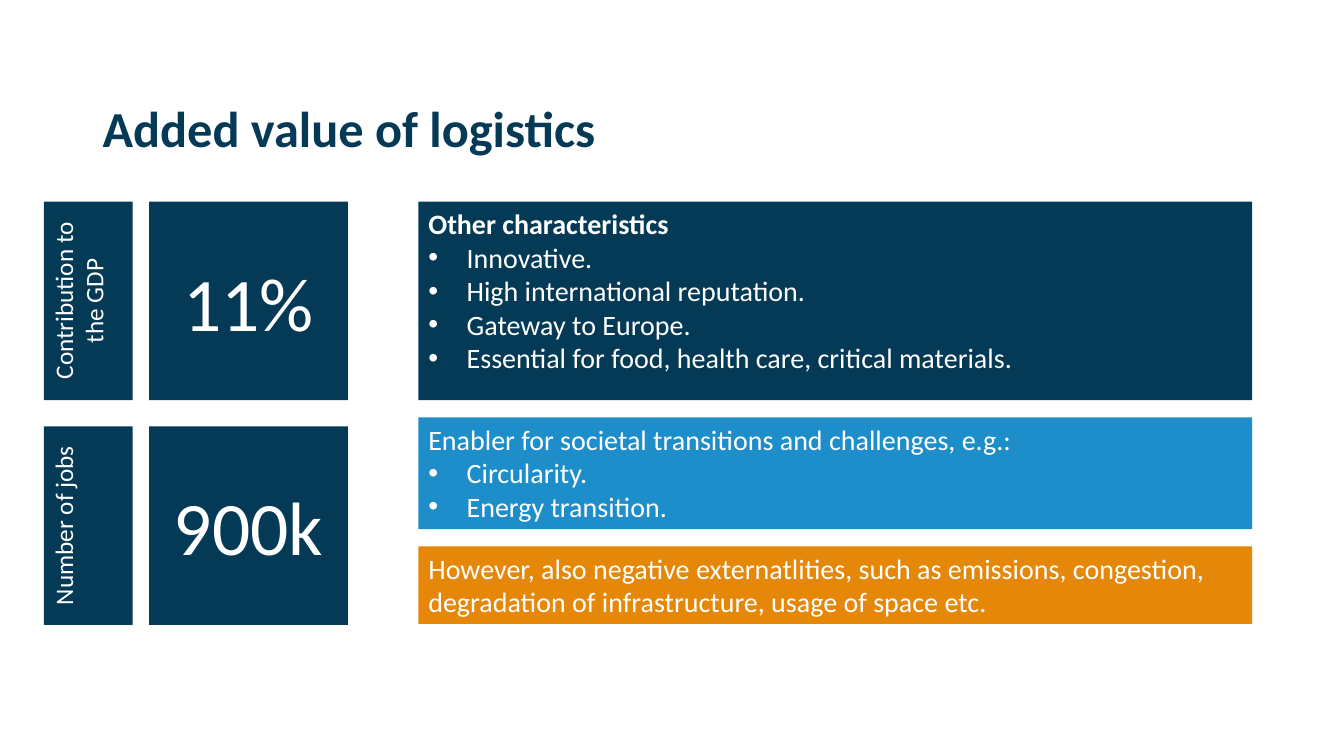
"""Build the slide on the added value of logistics."""
from lxml import etree
from pptx import Presentation
from pptx.dml.color import RGBColor
from pptx.enum.shapes import MSO_SHAPE as Shape
from pptx.enum.text import MSO_ANCHOR as Anchor, MSO_AUTO_SIZE as AutoSize, PP_ALIGN as Align
from pptx.oxml.ns import qn
from pptx.util import Inches, Pt

COLORS = {"navy": "043A56", "blue": "1D8ECA", "orange": "E58709", "white": "FFFFFF"}
BULLET_INDENT = Inches(0.38)
TILE = 1.97
LABEL_HEIGHT = 0.88

deck = Presentation()
deck.slide_width, deck.slide_height = Inches(13.33), Inches(7.5)
page = deck.slides.add_slide(deck.slide_layouts[6])


def write(box, lines, size, color="white", align=Align.LEFT, anchor=Anchor.TOP):
    frame = box.text_frame
    frame.word_wrap = True
    frame.vertical_anchor = anchor
    frame.text = "\n".join(lines)
    for para in frame.paragraphs:
        para.alignment = align
        for span in para.runs:
            span.font.name = "Calibri"
            span.font.size = Pt(size)
            span.font.color.rgb = RGBColor.from_string(COLORS[color])
    return frame


def add_block(left, top, width, height, color):
    box = page.shapes.add_shape(
        Shape.RECTANGLE, Inches(left), Inches(top), Inches(width), Inches(height))
    box.shadow.inherit = False
    box.fill.solid()
    box.fill.fore_color.rgb = RGBColor.from_string(COLORS[color])
    box.line.fill.background()
    return box


title = page.shapes.add_textbox(Inches(0.92), Inches(0.76), Inches(11.5), Inches(1.09))
heading = write(title, ["Added value of logistics"], 36, "navy", anchor=Anchor.MIDDLE).paragraphs[0]
heading.line_spacing = 0.9
heading.runs[0].font.bold = True

figures = [(2, "Contribution to the GDP", "11%"), (4.23, "Number of jobs", "900k")]
for top, caption, value in figures:
    label = add_block(-0.11, top + (TILE - LABEL_HEIGHT) / 2, TILE, LABEL_HEIGHT, "navy")
    label.rotation = 270
    frame = write(label, [caption], 18, align=Align.CENTER)
    frame.margin_left = frame.margin_right = Inches(0.04)
    frame.margin_top = frame.margin_bottom = Inches(0.04)
    tile = add_block(1.48, top, TILE, TILE, "navy")
    write(tile, [value], 54, align=Align.CENTER, anchor=Anchor.MIDDLE)

panels = [
    (2, 1.97, "navy", AutoSize.NONE, True, [
        "Other characteristics",
        "Innovative.",
        "High international reputation.",
        "Gateway to Europe.",
        "Essential for food, health care, critical materials."]),
    (4.14, 1.11, "blue", AutoSize.SHAPE_TO_FIT_TEXT, False, [
        "Enabler for societal transitions and challenges, e.g.:",
        "Circularity.",
        "Energy transition."]),
    (5.42, 0.77, "orange", AutoSize.SHAPE_TO_FIT_TEXT, False, [
        "However, also negative externatlities, such as emissions, congestion, "
        "degradation of infrastructure, usage of space etc."]),
]
for top, height, color, sizing, bold_lead, lines in panels:
    frame = write(add_block(4.15, top, 8.27, height, color), lines, 20)
    frame.auto_size = sizing
    lead, *items = frame.paragraphs
    lead.runs[0].font.bold = bold_lead
    for item in items:
        props = item._p.get_or_add_pPr()
        props.set("marL", str(BULLET_INDENT))
        props.set("indent", str(-BULLET_INDENT))
        etree.SubElement(props, qn("a:buFont")).set("typeface", "Arial")
        etree.SubElement(props, qn("a:buChar")).set("char", "•")

deck.save("out.pptx")
